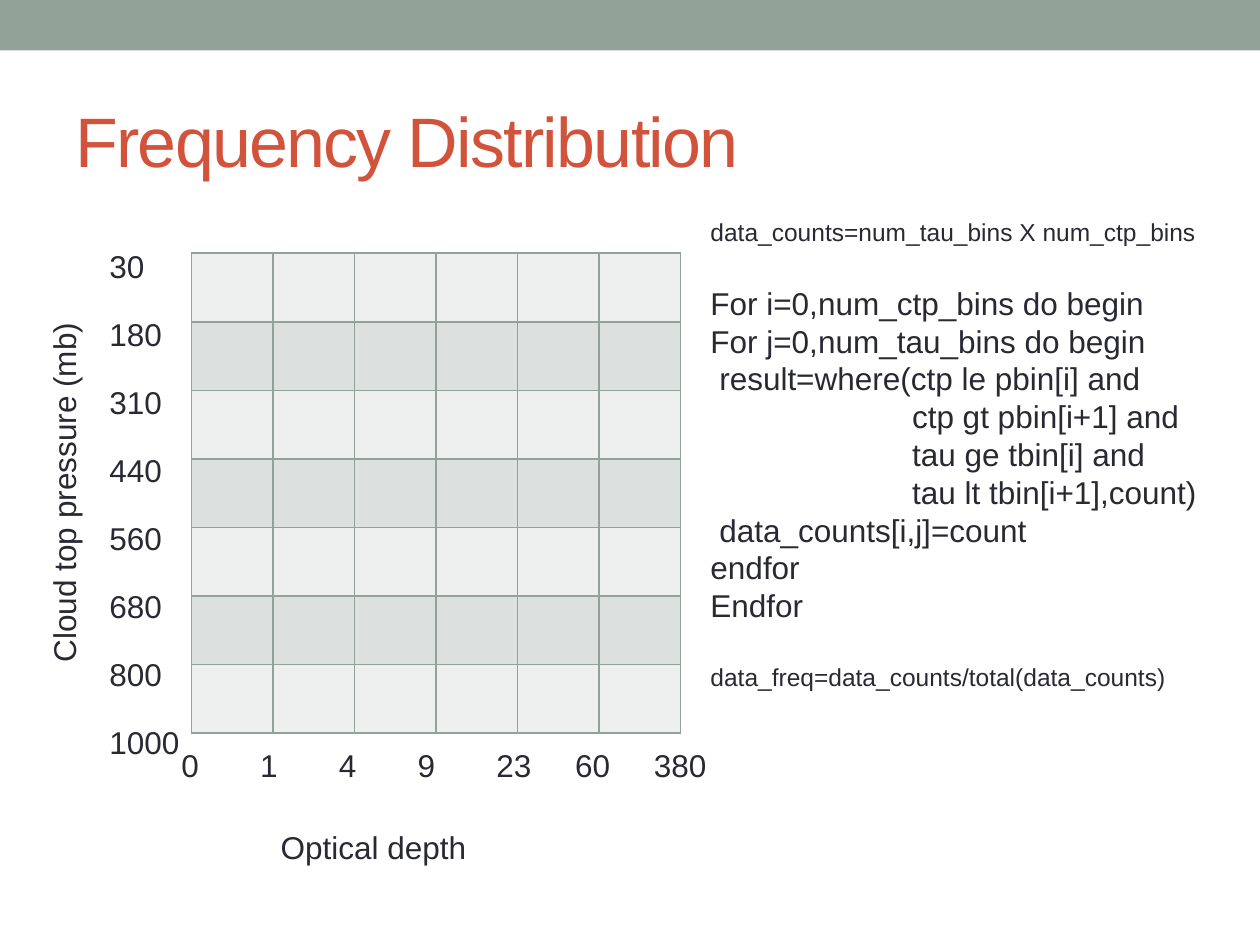
import dataclasses

import pptx
import pptx.dml.color
import pptx.enum.shapes
import pptx.enum.text
import pptx.oxml
import pptx.oxml.ns
import pptx.util

Inches = pptx.util.Inches
Pt = pptx.util.Pt


@dataclasses.dataclass(frozen=True)
class Theme:
    font: str = "Arial"
    band: str = "93A299"
    heading: str = "D2533C"
    ink: str = "292934"
    row_fills: tuple = ("EEF0EF", "DCE0DE")
    title_size: int = 40
    body_size: int = 18
    note_size: int = 14


THEME = Theme()
PRESSURES = ("30", "180", "310", "440", "560", "680", "800", "1000")
DEPTHS = ("0", "1", "4", "9", "23", "60", "380")
ONE_SPACE, CONDITION = 0.07, 1.6
# Each line: text, size, indent in inches, space before in points
CODE = (
    ("data_counts=num_tau_bins X num_ctp_bins", THEME.note_size, 0, 0),
    ("For i=0,num_ctp_bins do begin", THEME.body_size, 0, 21.6),
    ("For j=0,num_tau_bins do begin", THEME.body_size, 0, 0),
    ("result=where(ctp le pbin[i] and", THEME.body_size, ONE_SPACE, 0),
    ("ctp gt pbin[i+1] and", THEME.body_size, CONDITION, 0),
    ("tau ge tbin[i] and", THEME.body_size, CONDITION, 0),
    ("tau lt tbin[i+1],count)", THEME.body_size, CONDITION, 0),
    ("data_counts[i,j]=count", THEME.body_size, ONE_SPACE, 0),
    ("endfor", THEME.body_size, 0, 0),
    ("Endfor", THEME.body_size, 0, 0),
    ("data_freq=data_counts/total(data_counts)", THEME.note_size, 0, 21.6),
)


def rgb(value):
    return pptx.dml.color.RGBColor.from_string(value)


def add_text_frame(slide, left, top, width, height, rotation=0):
    box = slide.shapes.add_textbox(Inches(left), Inches(top), Inches(width), Inches(height))
    box.rotation = rotation
    box.text_frame.word_wrap = True
    return box.text_frame


def add_run(paragraph, text, size=THEME.body_size, color=THEME.ink):
    run = paragraph.add_run()
    run.text = text
    run.font.name = THEME.font
    run.font.size = Pt(size)
    run.font.color.rgb = rgb(color)
    return run


def paragraphs(frame, count):
    """Return the frame's paragraphs, extended to the given count."""
    for _ in range(count - 1):
        frame.add_paragraph()
    return frame.paragraphs


def add_band(slide, left, top, width, height):
    band = slide.shapes.add_shape(
        pptx.enum.shapes.MSO_SHAPE.RECTANGLE,
        Inches(left), Inches(top), Inches(width), Inches(height))
    band.shadow.inherit = False
    band.fill.solid()
    band.fill.fore_color.rgb = rgb(THEME.band)
    band.line.fill.background()


def add_title(slide, left, top, width, height):
    frame = add_text_frame(slide, left, top, width, height)
    frame.vertical_anchor = pptx.enum.text.MSO_ANCHOR.MIDDLE
    run = add_run(frame.paragraphs[0], "Frequency Distribution", THEME.title_size, THEME.heading)
    run.font._element.set("spc", "-100")


def set_borders(cell):
    properties = cell._tc.get_or_add_tcPr()
    for position, side in enumerate(("lnL", "lnR", "lnT", "lnB")):
        properties.insert(position, pptx.oxml.parse_xml(
            f'<a:{side} {pptx.oxml.ns.nsdecls("a")} w="{Pt(1)}"><a:solidFill>'
            f'<a:srgbClr val="{THEME.band}"/></a:solidFill></a:{side}>'))


def add_grid(slide, left, top, width, height):
    rows, columns = len(PRESSURES) - 1, len(DEPTHS) - 1
    grid = slide.shapes.add_table(
        rows, columns, Inches(left), Inches(top), Inches(width), Inches(height)).table
    for row_index, row in enumerate(grid.rows):
        for cell in row.cells:
            cell.fill.solid()
            cell.fill.fore_color.rgb = rgb(THEME.row_fills[row_index % 2])
            set_borders(cell)


def add_pressure_labels(slide, left, top, width, height):
    frame = add_text_frame(slide, left, top, width, height)
    for paragraph, pressure in zip(paragraphs(frame, len(PRESSURES)), PRESSURES):
        paragraph.line_spacing = 1.8
        add_run(paragraph, pressure)


def add_depth_labels(slide, left, top, width, height, step):
    """Set the depth bounds on one line, on tab stops one step apart."""
    paragraph = add_text_frame(slide, left, top, width, height).paragraphs[0]
    stops = "".join(
        f'<a:tab pos="{Inches(step * index)}" algn="l"/>' for index in range(1, len(DEPTHS)))
    paragraph._p.get_or_add_pPr().append(pptx.oxml.parse_xml(
        f'<a:tabLst {pptx.oxml.ns.nsdecls("a")}>{stops}</a:tabLst>'))
    add_run(paragraph, "\t".join(DEPTHS))


def add_histogram(slide, left, top, width, height):
    """Place the bin grid in the box, with its axes to the left and below."""
    bottom = top + height
    add_grid(slide, left, top, width, height)
    depth_name = add_text_frame(slide, left + 0.61, bottom + 0.7, 2.67, 0.4)
    add_run(depth_name.paragraphs[0], "Optical depth")
    pressure_name = add_text_frame(slide, left - 2.47, top + 1.69, 2.91, 0.4, rotation=270)
    add_run(pressure_name.paragraphs[0], "Cloud top pressure (mb)")
    add_depth_labels(slide, left - 0.18, bottom + 0.05, 4.91, 0.4, step=0.625)
    add_pressure_labels(slide, left - 0.75, top - 0.34, 0.89, 4.38)


def add_code(slide, left, top, width, height):
    frame = add_text_frame(slide, left, top, width, height)
    for paragraph, (text, size, indent, gap) in zip(paragraphs(frame, len(CODE)), CODE):
        paragraph.space_before = Pt(gap)
        properties = paragraph._p.get_or_add_pPr()
        properties.set("marL", str(Inches(indent)))
        properties.set("indent", "0")
        add_run(paragraph, text, size)


def main():
    presentation = pptx.Presentation()
    presentation.slide_width = Inches(10)
    presentation.slide_height = Inches(7.5)
    slide = presentation.slides.add_slide(presentation.slide_layouts[6])
    add_band(slide, 0, 0, 10, 0.4)
    add_title(slide, 0.5, 0.57, 9, 1.08)
    add_histogram(slide, 1.52, 2.01, 3.88, 3.81)
    add_code(slide, 5.54, 1.67, 4.22, 4.21)
    presentation.save("out.pptx")


if __name__ == "__main__":
    main()
